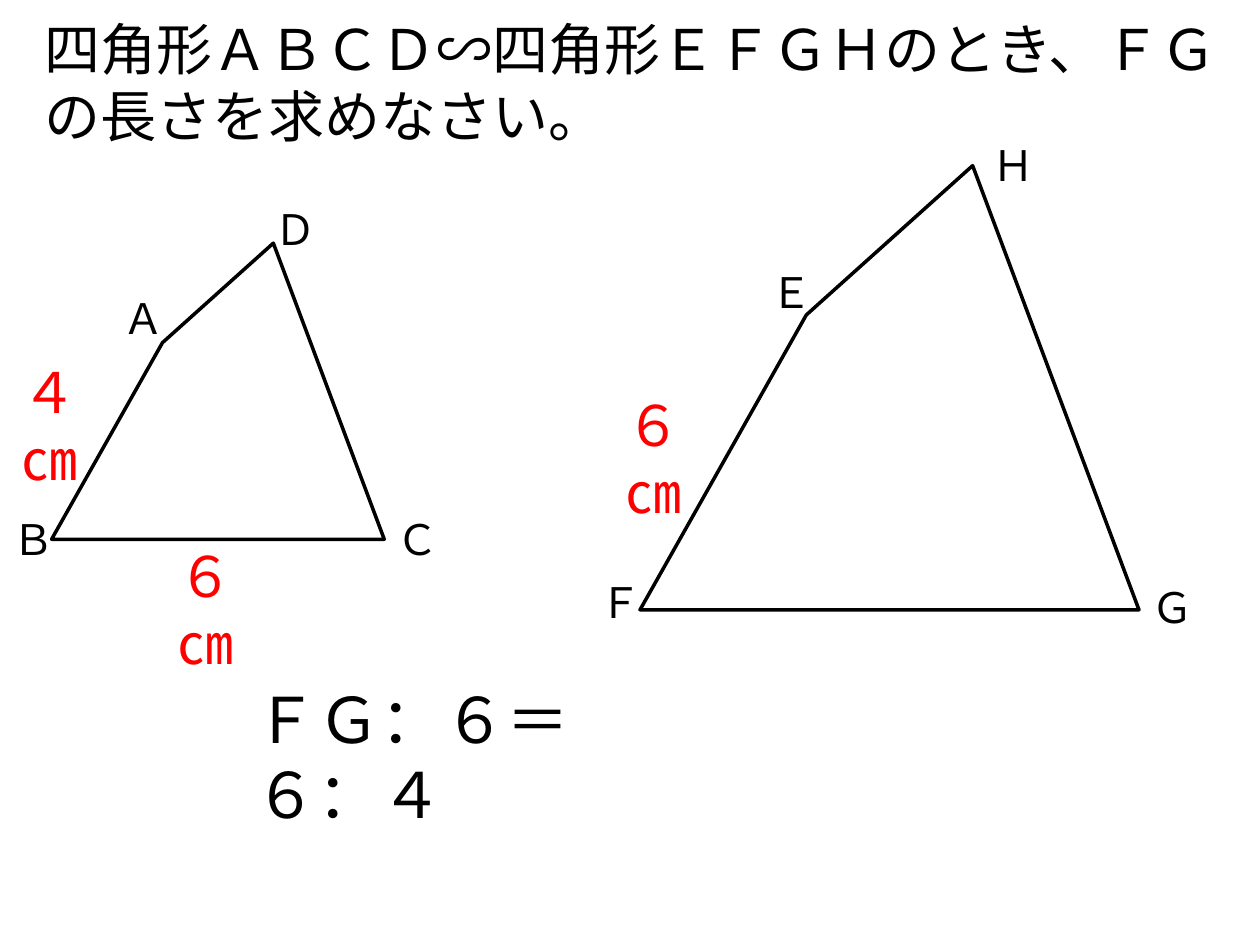
from pptx import Presentation
from pptx.dml.color import RGBColor
from pptx.enum.text import MSO_ANCHOR, MSO_AUTO_SIZE, PP_ALIGN
from pptx.util import Inches, Pt

LEFT = PP_ALIGN.LEFT
MIDDLE = MSO_ANCHOR.MIDDLE
NO_FIT = MSO_AUTO_SIZE.NONE
FIT_SHAPE = MSO_AUTO_SIZE.SHAPE_TO_FIT_TEXT
TITLE_ONLY = 5
BLACK, RED = "000000", "FF0000"


def color(hex_string):
    return RGBColor.from_string(hex_string)


def write_text(shape, text, size, hex_string):
    """Fill a shape with one left-aligned, wrapping paragraph."""
    text_frame = shape.text_frame
    text_frame.text = text
    text_frame.word_wrap = True
    paragraph = text_frame.paragraphs[0]
    paragraph.alignment = LEFT
    font = paragraph.runs[0].font
    font.name = "Calibri"
    font.size = Pt(size)
    font.color.rgb = color(hex_string)


presentation = Presentation()
presentation.slide_width = Inches(10)
presentation.slide_height = Inches(7.5)
slide = presentation.slides.add_slide(presentation.slide_layouts[TITLE_ONLY])

title = slide.shapes.title
title.left, title.top = Inches(0.25), Inches(0.14)
title.width, title.height = Inches(9.61), Inches(1.01)
write_text(title, "四角形ＡＢＣＤ∽四角形ＥＦＧＨのとき、ＦＧの長さを求めなさい。", 32, BLACK)
title.text_frame.vertical_anchor = MIDDLE
title.text_frame.auto_size = NO_FIT

# Similar quadrilaterals: corners relative to the lower left one, ratio 4 : 6
corners = [(1.76, -2.35), (0.88, -1.56), (0, 0), (2.64, 0)]
for left, bottom, scale in [(0.41, 4.28, 1), (5.08, 4.84, 1.5)]:
    points = [(Inches(left + x * scale), Inches(bottom + y * scale)) for x, y in corners]
    builder = slide.shapes.build_freeform(*points[0])
    builder.add_line_segments(points[1:], close=True)
    quadrilateral = builder.convert_to_shape()
    quadrilateral.shadow.inherit = False
    quadrilateral.fill.background()
    quadrilateral.line.color.rgb = color(BLACK)
    quadrilateral.line.width = Pt(2)

vertices = [
    ("Ａ", 0.87, 2.27), ("Ｄ", 2.08, 1.57), ("Ｃ", 3.05, 4.03), ("Ｂ", 0, 4.03),
    ("Ｈ", 7.78, 1.06), ("Ｇ", 9.04, 4.57), ("Ｆ", 4.66, 4.53), ("Ｅ", 6.02, 2.07),
]
lengths = [("６㎝", 1.31, 4.25), ("４㎝", 0.07, 2.79), ("６㎝", 4.87, 3.05)]
equation = [("ＦＧ：６＝６：４", 1.92, 5.35)]

for labels, width, height, size, hex_string in [
    (vertices, 0.45, 0.5, 24, BLACK),
    (lengths, 0.96, 0.64, 32, RED),
    (equation, 2.96, 0.71, 36, BLACK),
]:
    for text, left, top in labels:
        label = slide.shapes.add_textbox(Inches(left), Inches(top), Inches(width), Inches(height))
        write_text(label, text, size, hex_string)
        label.text_frame.auto_size = FIT_SHAPE

presentation.save("out.pptx")
